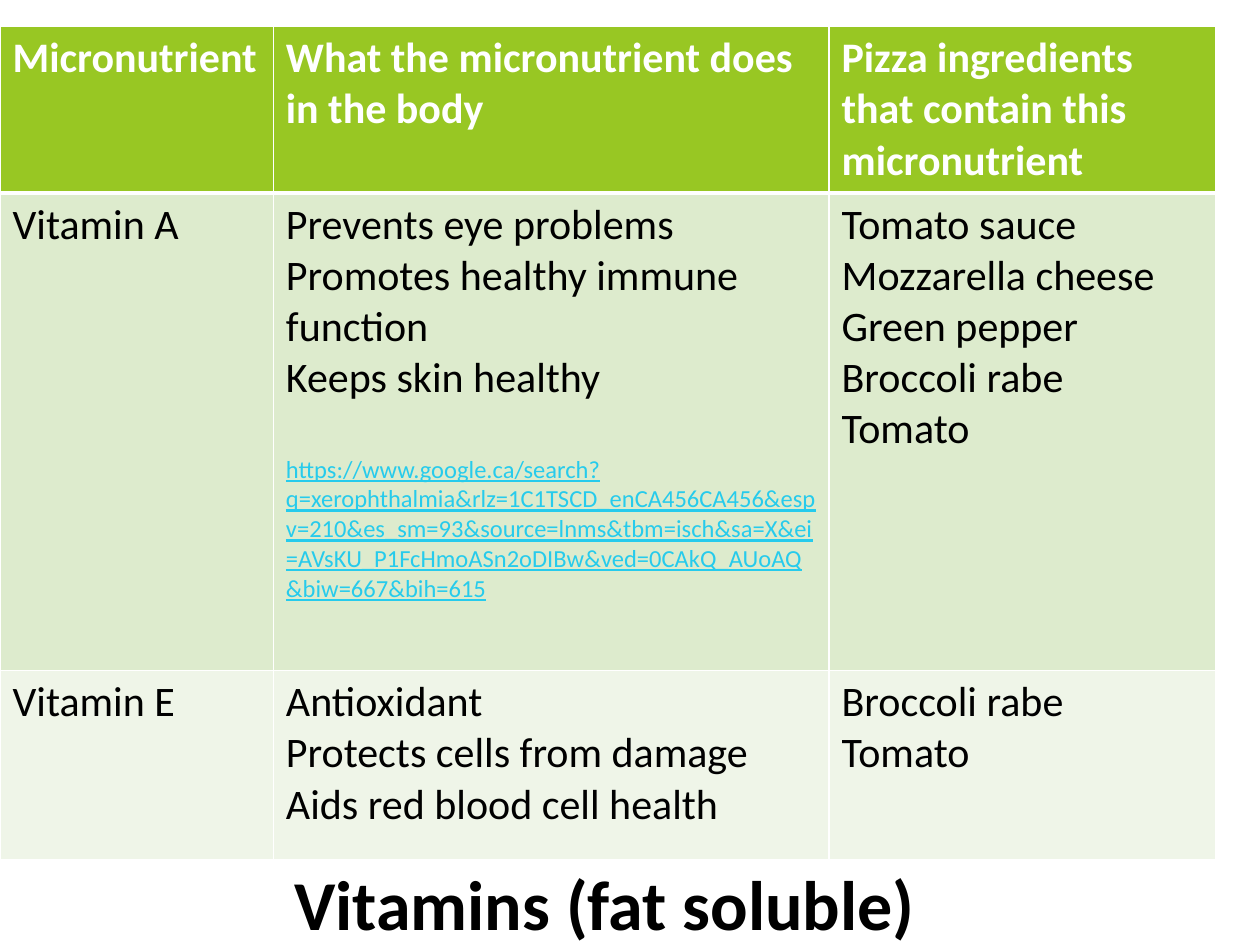
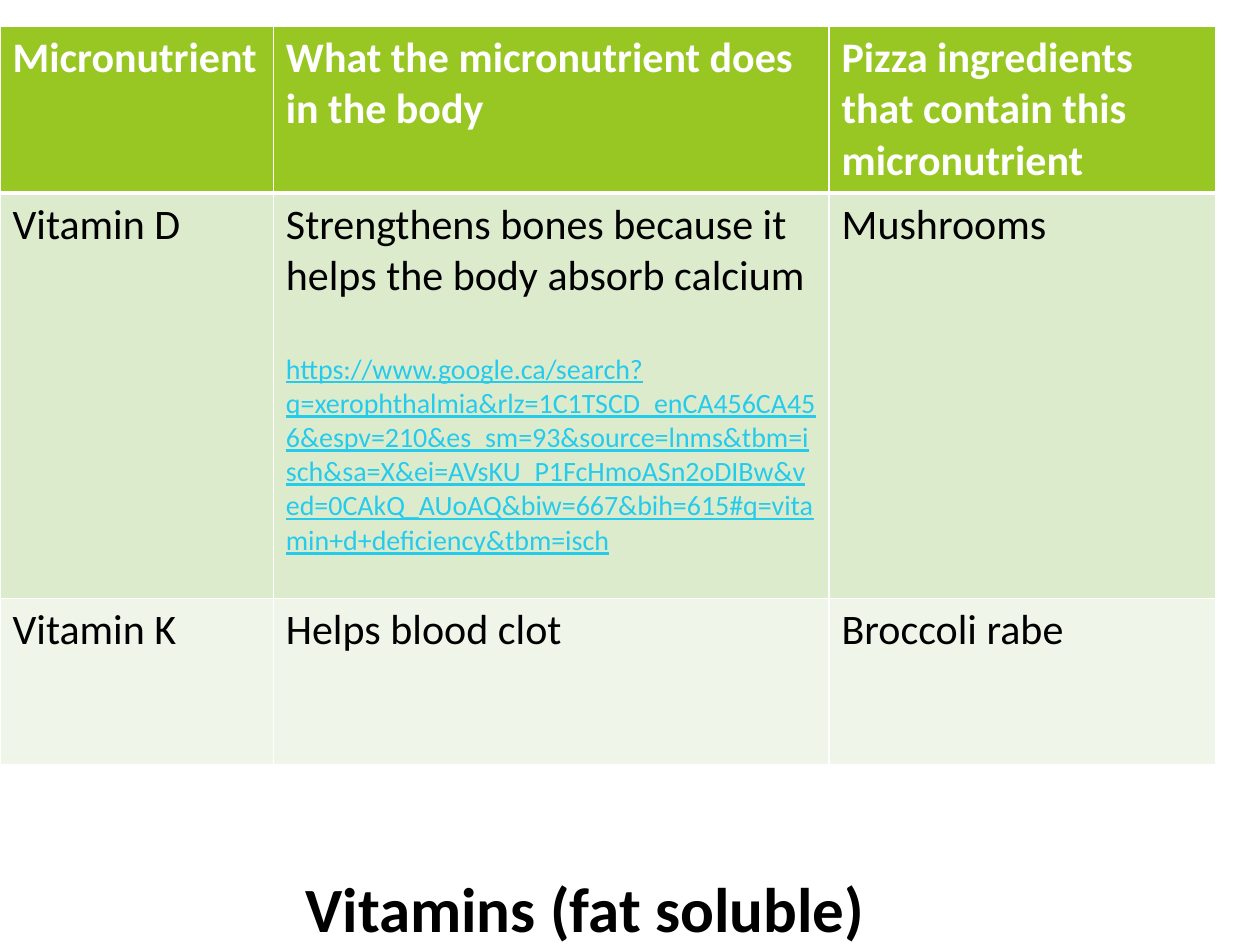
from lxml import etree
from pptx import Presentation
from pptx import util as u
from pptx.dml.color import RGBColor
from pptx.enum import text
from pptx.oxml import ns

WHITE = RGBColor(0xFF, 0xFF, 0xFF)
BLACK = RGBColor(0x00, 0x00, 0x00)
GREEN = RGBColor(0x98, 0xC7, 0x23)
LINK_BLUE = RGBColor(0x26, 0xCB, 0xEC)
BODY_BANDS = (RGBColor(0xDD, 0xEB, 0xCD), RGBColor(0xEF, 0xF5, 0xE8))

FONT = "Calibri"
TEXT_SIZE = 24
LINK_GAP = 29
SLIDE_WIDTH, SLIDE_HEIGHT = u.Inches(10), u.Inches(7.5)
COLUMN_SHARES = (0.217, 0.441, 0.307)
TABLE_TOP = 0.028

TITLE = "Vitamins (fat soluble)"
HEADER = ("Micronutrient", "What the micronutrient does in the body",
          "Pizza ingredients that contain this micronutrient")
SEARCH_LINK = ("https://www.google.ca/search?q=xerophthalmia&rlz=1C1TSCD_enCA456CA456"
               "&espv=210&es_sm=93&source=lnms&tbm=isch&sa=X"
               "&ei=AVsKU_P1FcHmoASn2oDIBw&ved=0CAkQ_AUoAQ&biw=667&bih=615")

# Boxes are left, top, width, height as shares of the slide; row heights are in inches.
VITAMIN_SLIDES = (
    {
        "title_box": (0.161, 0.877, 0.575, 0.123), "title_size": 40, "link_size": 14,
        "row_heights": (1.31, 3.79, 1.5),
        "rows": (
            (("Vitamin A",),
             ("Prevents eye problems", "Promotes healthy immune function",
              "Keeps skin healthy", SEARCH_LINK),
             ("Tomato sauce", "Mozzarella cheese", "Green pepper", "Broccoli rabe", "Tomato")),
            (("Vitamin E",),
             ("Antioxidant", "Protects cells from damage", "Aids red blood cell health"),
             ("Broccoli rabe", "Tomato")),
        ),
    },
    {
        "title_box": (0.224, 0.888, 0.472, 0.112), "title_size": 36, "link_size": 16,
        "row_heights": (1.31, 3.22, 1.32),
        "rows": (
            (("Vitamin D",),
             ("Strengthens bones because it helps the body absorb calcium",
              SEARCH_LINK + "#q=vitamin+d+deficiency&tbm=isch"),
             ("Mushrooms",)),
            (("Vitamin K",), ("Helps blood clot",), ("Broccoli rabe",)),
        ),
    },
)


def add_run(paragraph, wording, size, color, bold=False):
    run = paragraph.add_run()
    run.text = wording
    run.font.name = FONT
    run.font.size = u.Pt(size)
    run.font.bold = bold
    run.font.color.rgb = color
    return run


def set_borders(cell, top, bottom):
    """Draw white cell borders; top and bottom widths are in points."""
    properties = cell._tc.get_or_add_tcPr()
    for side, width in (("lnL", 1), ("lnR", 1), ("lnT", top), ("lnB", bottom)):
        line = etree.SubElement(properties, ns.qn(f"a:{side}"), w=str(u.Pt(width)))
        fill = etree.SubElement(line, ns.qn("a:solidFill"))
        etree.SubElement(fill, ns.qn("a:srgbClr"), val=str(WHITE))


def fill_cell(cell, lines, row_index, link_size):
    is_header = row_index == 0
    set_borders(cell, top=3 if row_index == 1 else 1, bottom=3 if is_header else 1)
    cell.fill.solid()
    cell.fill.fore_color.rgb = GREEN if is_header else BODY_BANDS[row_index - 1]
    frame = cell.text_frame
    for index, line in enumerate(lines):
        paragraph = frame.add_paragraph() if index else frame.paragraphs[0]
        if line.startswith("https:"):
            paragraph.space_before = u.Pt(LINK_GAP)
            add_run(paragraph, line, link_size, LINK_BLUE).font.underline = True
        else:
            add_run(paragraph, line, TEXT_SIZE, WHITE if is_header else BLACK, is_header)


def add_vitamin_table(slide, rows, row_heights, link_size):
    all_rows = (tuple((heading,) for heading in HEADER), *rows)
    widths = [int(SLIDE_WIDTH * share) for share in COLUMN_SHARES]
    heights = [u.Inches(height) for height in row_heights]
    table = slide.shapes.add_table(len(all_rows), len(HEADER), 0, int(SLIDE_HEIGHT * TABLE_TOP),
                                   sum(widths), sum(heights)).table
    table.horz_banding = False
    for column, width in zip(table.columns, widths):
        column.width = width
    for row_index, (row, height) in enumerate(zip(table.rows, heights)):
        row.height = height
        for cell, lines in zip(row.cells, all_rows[row_index]):
            fill_cell(cell, lines, row_index, link_size)


def place_title(slide, box, size):
    title = slide.shapes.title
    left, top, width, height = box
    title.left, title.width = int(SLIDE_WIDTH * left), int(SLIDE_WIDTH * width)
    title.top, title.height = int(SLIDE_HEIGHT * top), int(SLIDE_HEIGHT * height)
    frame = title.text_frame
    frame.word_wrap = True
    frame.auto_size = text.MSO_AUTO_SIZE.NONE
    frame.vertical_anchor = text.MSO_ANCHOR.BOTTOM
    frame.margin_top = frame.margin_bottom = 0
    paragraph = frame.paragraphs[0]
    paragraph.alignment = text.PP_ALIGN.RIGHT
    add_run(paragraph, TITLE, size, BLACK, bold=True)


def add_vitamin_slide(presentation, content):
    slide = presentation.slides.add_slide(presentation.slide_layouts.get_by_name("Title Only"))
    add_vitamin_table(slide, content["rows"], content["row_heights"], content["link_size"])
    place_title(slide, content["title_box"], content["title_size"])


def main():
    presentation = Presentation()
    presentation.slide_width, presentation.slide_height = SLIDE_WIDTH, SLIDE_HEIGHT
    for content in VITAMIN_SLIDES:
        add_vitamin_slide(presentation, content)
    presentation.save("out.pptx")


if __name__ == "__main__":
    main()
